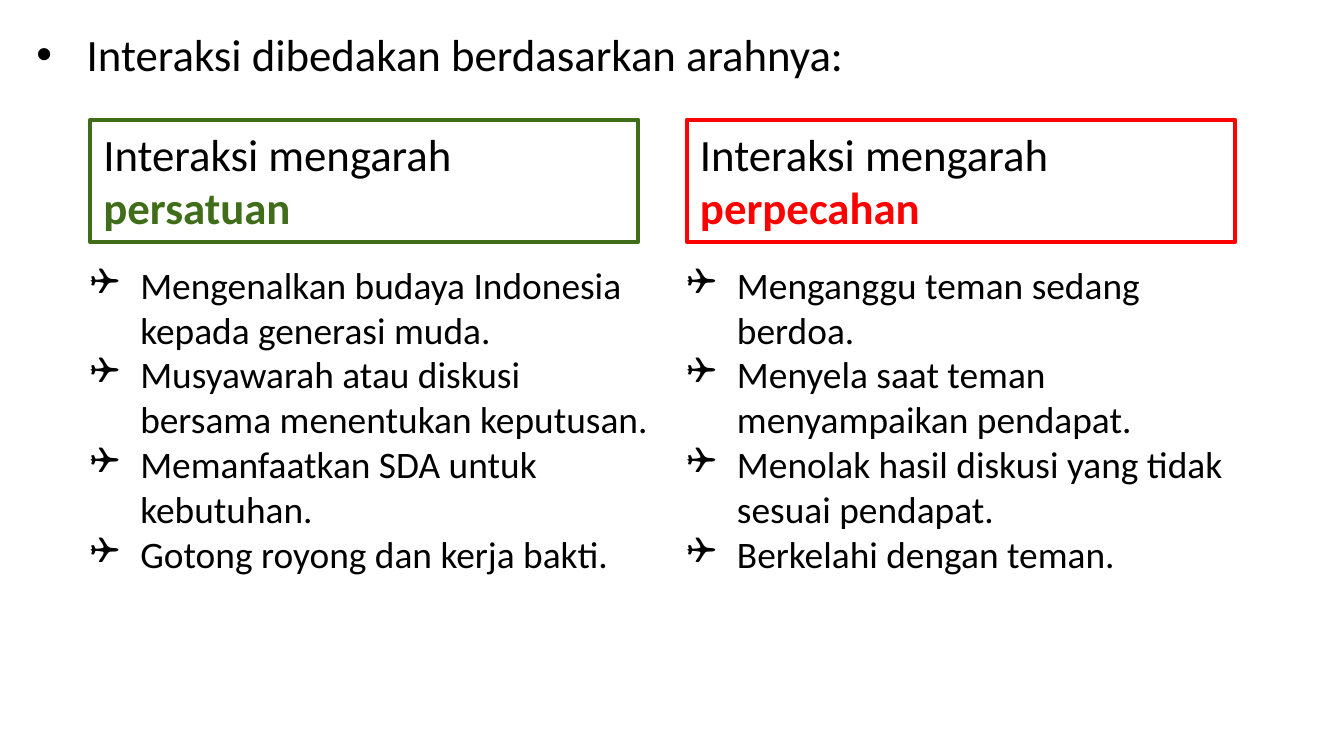
from lxml import etree
from pptx import Presentation
from pptx.dml.color import RGBColor
from pptx.enum.shapes import MSO_SHAPE
from pptx.enum.text import MSO_ANCHOR, MSO_AUTO_SIZE, PP_ALIGN
from pptx.oxml.ns import qn
from pptx.util import Inches, Pt

RECTANGLE = MSO_SHAPE.RECTANGLE
TOP = MSO_ANCHOR.TOP
LEFT = PP_ALIGN.LEFT
NO_AUTOFIT = MSO_AUTO_SIZE.NONE

BLACK = RGBColor(0x00, 0x00, 0x00)
WHITE = RGBColor(0xFF, 0xFF, 0xFF)
GREEN = RGBColor(0x3F, 0x6D, 0x19)
RED = RGBColor(0xFF, 0x00, 0x00)

CELL = Inches(0.1)  # side of one grid square
HANGING_INDENT = Pt(27)
COLUMN_LEFT = 6.7
COLUMN_STEP = 44.4
INSET = 1  # text inset of a box, in grid squares
DOT = ("•", "Arial")
CHECKBOX = ("❑", "Wingdings")

DIRECTIONS = [
    ("persatuan", GREEN, 27.9, [
        "Mengenalkan budaya Indonesia kepada generasi muda.",
        "Musyawarah atau diskusi bersama menentukan keputusan.",
        "Memanfaatkan SDA untuk kebutuhan.",
        "Gotong royong dan kerja bakti.",
    ]),
    ("perpecahan", RED, 24.6, [
        "Menganggu teman sedang berdoa.",
        "Menyela saat teman menyampaikan pendapat.",
        "Menolak hasil diskusi yang tidak sesuai pendapat.",
        "Berkelahi dengan teman.",
    ]),
]


class SlideBuilder:
    """Holds the text style and the slide being built."""

    font_name = "Calibri"
    heading_size = Pt(24)
    list_size = Pt(20)

    def __init__(self, slide):
        self.slide = slide

    def grid(self, *cells):
        return [round(cell * CELL) for cell in cells]

    def prepare_frame(self, shape):
        frame = shape.text_frame
        frame.word_wrap = True
        frame.auto_size = NO_AUTOFIT
        frame.vertical_anchor = TOP
        return frame

    def format_paragraph(self, paragraph, size, bullet=None):
        paragraph.alignment = LEFT
        if bullet:
            character, bullet_font = bullet
            properties = paragraph._p.get_or_add_pPr()
            properties.set("marL", str(HANGING_INDENT))
            properties.set("indent", str(-HANGING_INDENT))
            etree.SubElement(properties, qn("a:buFont"), typeface=bullet_font)
            etree.SubElement(properties, qn("a:buChar"), char=character)
        paragraph.font.name = self.font_name
        paragraph.font.size = size
        paragraph.font.color.rgb = BLACK

    def title(self, text, *cells):
        shape = self.slide.shapes.title
        shape.left, shape.top, shape.width, shape.height = self.grid(*cells)
        frame = self.prepare_frame(shape)
        frame.text = text
        self.format_paragraph(frame.paragraphs[0], self.heading_size, DOT)

    def box(self, *cells, outline=None):
        shape = self.slide.shapes.add_shape(RECTANGLE, *self.grid(*cells))
        shape.shadow.inherit = False
        shape.fill.solid()
        shape.fill.fore_color.rgb = WHITE
        if outline is None:
            shape.line.fill.background()
        else:
            shape.line.color.rgb = outline
            shape.line.width = Pt(2)
        return self.prepare_frame(shape)

    def direction_label(self, direction, color, *cells):
        paragraph = self.box(*cells, outline=color).paragraphs[0]
        self.format_paragraph(paragraph, self.heading_size)
        paragraph.add_run().text = "Interaksi mengarah "
        emphasis = paragraph.add_run()
        emphasis.text = direction
        emphasis.font.bold = True
        emphasis.font.color.rgb = color

    def checklist(self, items, *cells):
        frame = self.box(*cells)
        frame.text = "\n".join(items)
        for paragraph in frame.paragraphs:
            self.format_paragraph(paragraph, self.list_size, CHECKBOX)


def main():
    presentation = Presentation()
    presentation.slide_width = Inches(10)
    presentation.slide_height = presentation.slide_width * 9 // 16
    title_only = presentation.slide_layouts.get_by_name("Title Only")
    builder = SlideBuilder(presentation.slides.add_slide(title_only))

    builder.title("Interaksi dibedakan berdasarkan arahnya:", 1.7, 1.5, 81.7, 5)
    for index, (direction, color, list_height, items) in enumerate(DIRECTIONS):
        left = COLUMN_LEFT + index * COLUMN_STEP
        builder.direction_label(direction, color, left, 8.9, 40.8, 9.1)
        builder.checklist(items, left - INSET, 19, 43.5, list_height)

    presentation.save("out.pptx")


if __name__ == "__main__":
    main()
